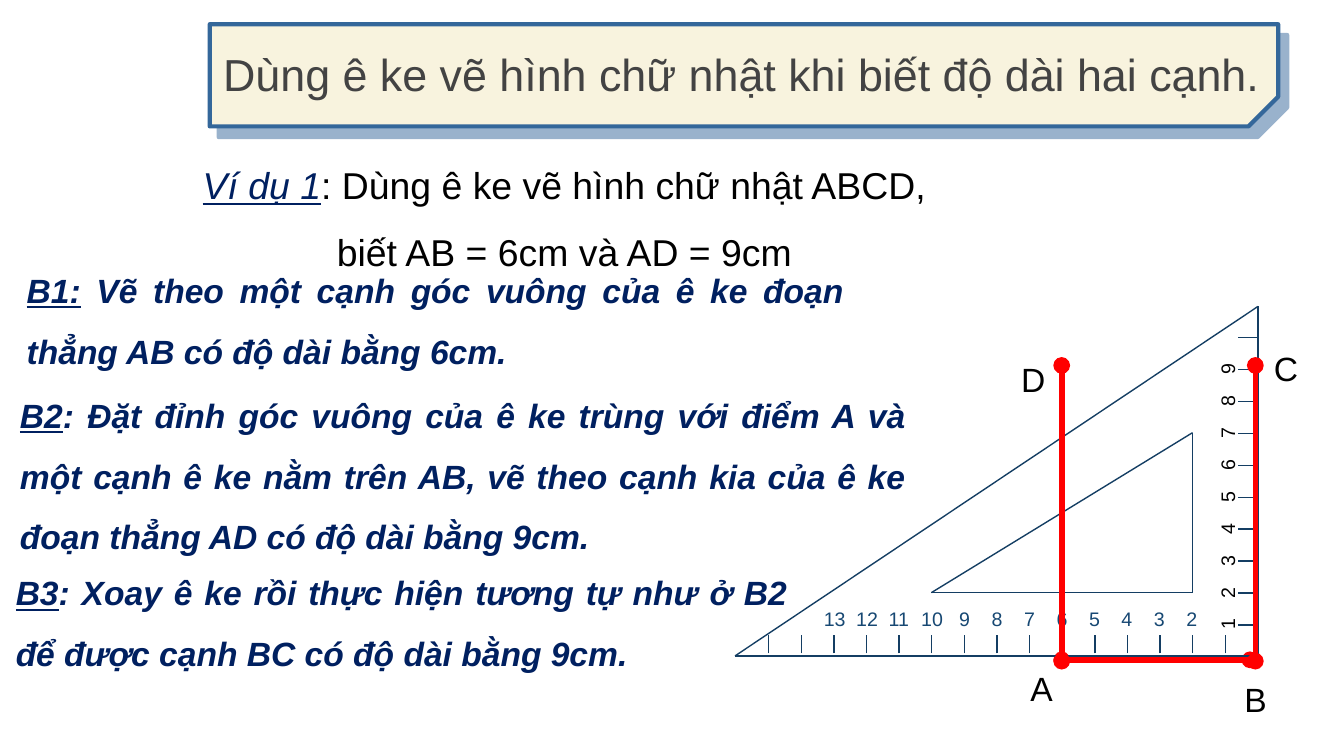
"""Builds a slide on drawing rectangle ABCD with a set square."""
from lxml import etree
from pptx import Presentation
from pptx.dml.color import RGBColor
from pptx.enum.shapes import MSO_CONNECTOR, MSO_SHAPE
from pptx.enum.text import MSO_ANCHOR, MSO_AUTO_SIZE, PP_ALIGN
from pptx.oxml import parse_xml
from pptx.oxml.ns import qn
from pptx.util import Pt

STRAIGHT = MSO_CONNECTOR.STRAIGHT
SNIPPED = MSO_SHAPE.SNIP_1_RECTANGLE
TOP = MSO_ANCHOR.TOP
FIXED, GROW = MSO_AUTO_SIZE.NONE, MSO_AUTO_SIZE.SHAPE_TO_FIT_TEXT
LEFT, CENTER, JUSTIFY = PP_ALIGN.LEFT, PP_ALIGN.CENTER, PP_ALIGN.JUSTIFY

COLORS = {
    "cream": "F8F3DE", "steel": "34679A", "heading": "434343", "navy": "002060",
    "black": "000000", "red": "FF0000", "ruler": "143E63", "scale": "174873",
}
DRAWING_NS = "http://schemas.openxmlformats.org/drawingml/2006/main"
SIDE_PITCH, BASE_PITCH, LABEL_PITCH = 17.1, 17.47, 17.4
DIGIT_INDENT = 2.9


class SlideBuilder:
    def __init__(self, slide):
        self.slide = slide
        self.shapes = slide.shapes
        self.font = "Arial"

    def color(self, name):
        return RGBColor.from_string(COLORS[name])

    def apply(self, target, formats):
        for attribute, value in formats.items():
            setattr(target, attribute, value)

    def fill_frame(self, frame, runs, paragraph_format, autosize):
        self.apply(frame, {"word_wrap": True, "auto_size": autosize})
        paragraph = frame.paragraphs[0]
        self.apply(paragraph, paragraph_format)
        for words, size, color, formats in runs:
            run = paragraph.add_run()
            run.text = words
            self.apply(run.font, {"name": self.font, "size": Pt(size), **formats})
            run.font.color.rgb = self.color(color)
        return paragraph

    def text(self, box, runs, rotation=0, **paragraph_format):
        holder = self.shapes.add_textbox(*map(Pt, box))
        holder.rotation = rotation
        return self.fill_frame(holder.text_frame, runs, paragraph_format, GROW)

    def scale(self, box, labels, stops, color, rotation=0):
        runs = [("\t".join(labels), 10.5, color, {})]
        paragraph = self.text(box, runs, rotation, alignment=LEFT)
        properties = paragraph._p.get_or_add_pPr()
        tab_list = etree.SubElement(properties, qn("a:tabLst"))
        for stop in stops:
            etree.SubElement(tab_list, qn("a:tab"), pos=str(int(Pt(stop))), algn="l")

    def title(self, box, words):
        heading = self.slide.shapes.title
        sides = ("left", "top", "width", "height")
        self.apply(heading, dict(zip(sides, map(Pt, box))))
        margins = {f"margin_{side}": Pt(7.2) for side in ("left", "right", "top", "bottom")}
        self.apply(heading.text_frame, {"vertical_anchor": TOP, **margins})
        self.fill_frame(heading.text_frame, [(words, 24, "heading", {})],
                        {"alignment": JUSTIFY, "line_spacing": 1.2}, FIXED)

    def banner(self, box):
        banner = self.shapes.add_shape(SNIPPED, *map(Pt, box))
        banner.rotation = 180
        banner.adjustments[0] = 0.29
        banner.fill.solid()
        banner.fill.fore_color.rgb = self.color("cream")
        banner.line.color.rgb = self.color("steel")
        banner.line.width = Pt(2.25)
        properties = banner.element.spPr
        properties.get_or_add_xfrm().set("flipH", "1")
        properties.append(parse_xml(
            f'<a:effectLst xmlns:a="{DRAWING_NS}"><a:outerShdw blurRad="0" '
            f'dist="{int(Pt(7.5))}" dir="3000000" algn="bl" rotWithShape="0">'
            f'<a:srgbClr val="{COLORS["steel"]}"><a:alpha val="50000"/></a:srgbClr>'
            '</a:outerShdw></a:effectLst>'))
        self.slide.shapes.title.element.addprevious(banner.element)

    def line(self, start, end, color="ruler", width=0.75, dots=False):
        line = self.shapes.add_connector(STRAIGHT, *map(Pt, (*start, *end)))
        line.line.color.rgb = self.color(color)
        line.line.width = Pt(width)
        if dots:
            for tag in ("a:headEnd", "a:tailEnd"):
                etree.SubElement(line.line._get_or_add_ln(), qn(tag), type="oval")
        etree.SubElement(line.element.spPr, qn("a:effectLst"))

    def edge(self, start, end):
        self.line(start, end, "red", 3, dots=True)

    def triangle(self, far, corner, peak):
        for start, end in ((far, corner), (corner, peak), (far, peak)):
            self.line(start, end)

    def set_square(self):
        self.shapes = self.slide.shapes.add_group_shape().shapes
        self.triangle((393.8, 351.4), (673.9, 351.4), (673.9, 164.2))
        self.triangle((499, 317.5), (638.9, 317.5), (638.9, 231.8))
        for index in range(10):
            y = 334.8 - index * SIDE_PITCH
            self.line((673.9, y), (663.1, y))
        for index in range(15):
            x = 656.4 - index * BASE_PITCH
            self.line((x, 350), (x, 340))
        side_labels = [str(number) for number in range(1, 10)]
        side_stops = [index * SIDE_PITCH for index in range(1, 9)]
        self.scale((563.8, 239.8, 188.6, 20.9), side_labels, side_stops, "black", 270)
        base_labels = [str(number) for number in range(13, 1, -1)]
        base_stops = [index * LABEL_PITCH + (DIGIT_INDENT if len(label) == 1 else 0)
                      for index, label in enumerate(base_labels) if index]
        self.scale((434.2, 321.8, 274.3, 20.2), base_labels, base_stops, "scale")
        self.shapes = self.slide.shapes

    def vertex(self, letter, left, top):
        self.text((left, top, 28.8, 28.8), [(letter, 18, "black", {})])

    def step(self, box, label, words, space_after):
        style = {"bold": True, "italic": True}
        runs = [(label, 18, "navy", {**style, "underline": True}), (words, 18, "navy", style)]
        self.text(box, runs, alignment=JUSTIFY, line_spacing=1.5, space_after=Pt(space_after))


def main():
    deck = Presentation()
    deck.slide_width, deck.slide_height = Pt(720), Pt(405)
    lesson = SlideBuilder(deck.slides.add_slide(deck.slide_layouts[5]))

    lesson.banner((112.3, 13, 572.4, 54.7))
    lesson.title((112.3, 12.2, 586, 69), "Dùng ê ke vẽ hình chữ nhật khi biết độ dài hai cạnh.")
    example = [
        ("Ví dụ 1", 20, "navy", {"italic": True, "underline": True}),
        (": Dùng ê ke vẽ hình chữ nhật ABCD, biết AB = 6cm và AD = 9cm", 20, "black", {}),
    ]
    lesson.text((88.6, 71.3, 427.7, 79.9), example, alignment=CENTER, line_spacing=1.5)

    lesson.edge((568.8, 353.5), (669.6, 353.5))
    lesson.vertex("A", 545, 354.2)
    lesson.vertex("B", 659.5, 360)
    lesson.set_square()
    lesson.edge((568.8, 354.2), (568.8, 195.8))
    lesson.vertex("D", 540, 188.6)
    lesson.vertex("C", 675.4, 182.9)
    lesson.edge((672.5, 354.2), (672.5, 195.8))

    steps = [
        ((7.2, 130.3, 452.2, 68.4), "B1:",
         " Vẽ theo một cạnh góc vuông của ê ke đoạn thẳng AB có độ dài bằng 6cm.", 0),
        ((3.6, 197.3, 488.9, 105.1), "B2",
         ": Đặt đỉnh góc vuông của ê ke trùng với điểm A và một cạnh ê ke nằm trên AB, "
         "vẽ theo cạnh kia của ê ke đoạn thẳng AD có độ dài bằng 9cm.", 10),
        ((1.4, 292.3, 427.7, 68.4), "B3",
         ": Xoay ê ke rồi thực hiện tương tự như ở B2 để được cạnh BC có độ dài bằng 9cm.", 10),
    ]
    for step in steps:
        lesson.step(*step)
    deck.save("out.pptx")


if __name__ == "__main__":
    main()
